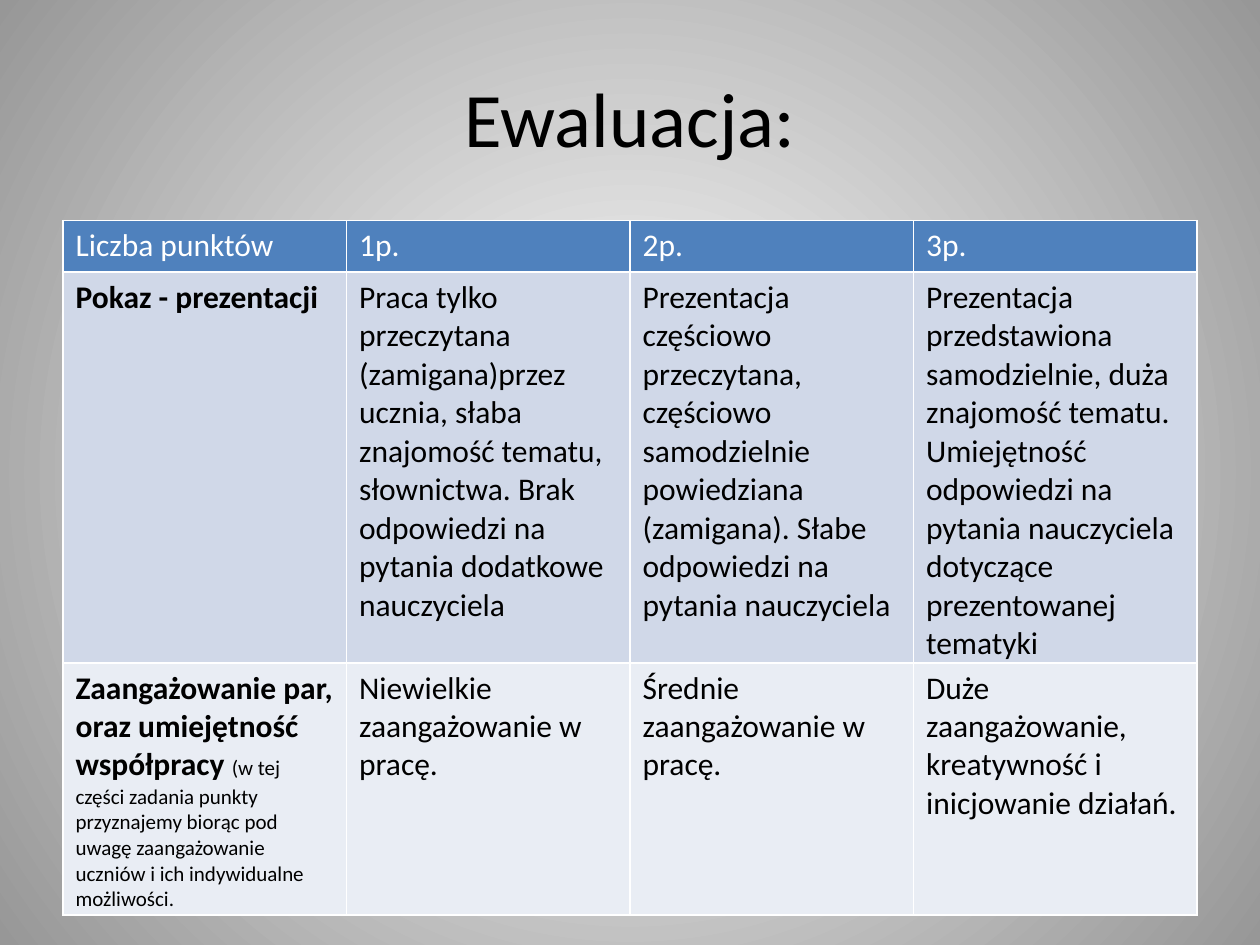
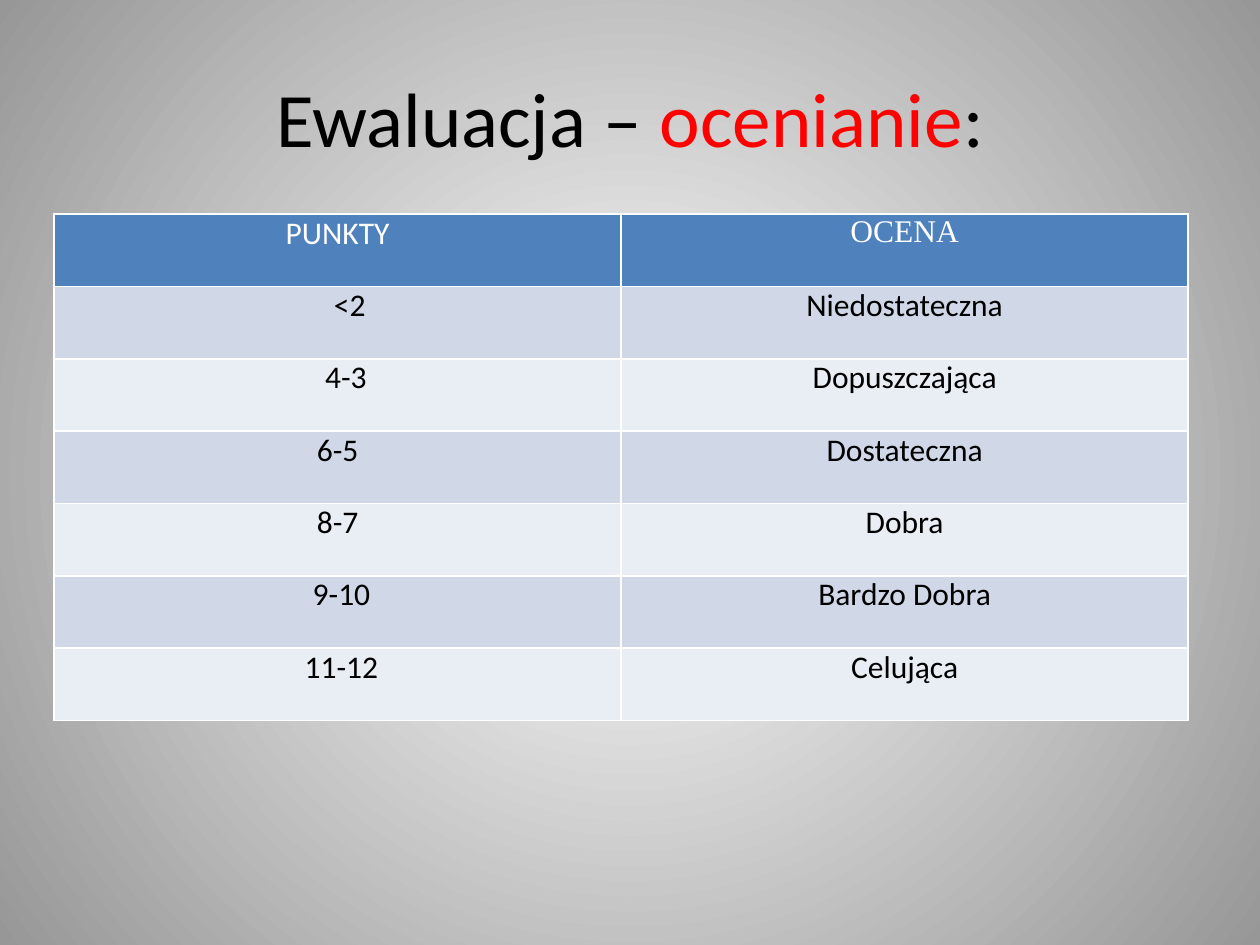
import pptx
import pptx.dml.color
import pptx.enum.text
import pptx.oxml
import pptx.util

Inches = pptx.util.Inches
Pt = pptx.util.Pt
CENTER = pptx.enum.text.PP_ALIGN.CENTER
LEFT = pptx.enum.text.PP_ALIGN.LEFT

# A text is a list of runs: (words, format changes).
CRITERIA_TITLE = [("Ewaluacja:", {})]
CRITERIA = [
    ["Liczba punktów", "1p.", "2p.", "3p."],
    [
        [("Pokaz - prezentacji", {"bold": True})],
        "Praca tylko przeczytana (zamigana)przez ucznia, słaba znajomość tematu, "
        "słownictwa. Brak odpowiedzi na pytania dodatkowe nauczyciela",
        "Prezentacja częściowo przeczytana, częściowo samodzielnie powiedziana "
        "(zamigana). Słabe odpowiedzi na pytania nauczyciela",
        "Prezentacja przedstawiona samodzielnie, duża znajomość tematu. Umiejętność "
        "odpowiedzi na pytania nauczyciela dotyczące prezentowanej tematyki",
    ],
    [
        [
            ("Zaangażowanie par, oraz umiejętność współpracy ", {"bold": True}),
            ("(w tej części zadania punkty przyznajemy biorąc pod uwagę "
             "zaangażowanie uczniów i ich indywidualne możliwości.", {"size": 12}),
        ],
        "Niewielkie zaangażowanie w pracę.",
        "Średnie zaangażowanie w pracę.",
        "Duże zaangażowanie, kreatywność i inicjowanie działań.",
    ],
]
CRITERIA_HEIGHTS = [0.41, 3.1, 2.0]

GRADES_TITLE = [("Ewaluacja – ", {}), ("ocenianie", {"color": "FF0000"}), (":", {})]
GRADES = [
    ["PUNKTY", [("OCENA", {"font": "Times New Roman"})]],
    ["<2", "Niedostateczna"],
    ["4-3", "Dopuszczająca"],
    ["6-5", "Dostateczna"],
    ["8-7", "Dobra"],
    ["9-10", "Bardzo Dobra"],
    ["11-12", "Celująca"],
]
GRADES_HEIGHTS = [4.02 / len(GRADES)] * len(GRADES)
GRADES_INDENTS = {1: 0.19, 2: 0.13, 5: 0.06, 6: 0.06}  # row: extra left margin of points

FONT = "Calibri"
BLACK, WHITE = "000000", "FFFFFF"
BACKGROUND_EDGE = "979797"
HEADER_FILL = "4F81BD"
BAND_FILLS = ["D0D8E8", "E9EDF4"]
CONTENT_WIDTH = 9
NS = 'xmlns:a="http://schemas.openxmlformats.org/drawingml/2006/main"'
NS_P = 'xmlns:p="http://schemas.openxmlformats.org/presentationml/2006/main"'


def rgb(color):
    return pptx.dml.color.RGBColor.from_string(color)


def set_background(master):
    """Give every slide a round gradient, white in the middle."""
    c_sld = master.element.cSld
    for old in c_sld.findall(pptx.oxml.ns.qn("p:bg")):
        c_sld.remove(old)
    c_sld.insert(0, pptx.oxml.parse_xml(
        f'<p:bg {NS} {NS_P}><p:bgPr><a:gradFill rotWithShape="1"><a:gsLst>'
        f'<a:gs pos="0"><a:srgbClr val="{WHITE}"/></a:gs>'
        f'<a:gs pos="100000"><a:srgbClr val="{BACKGROUND_EDGE}"/></a:gs></a:gsLst>'
        '<a:path path="circle"><a:fillToRect l="50000" t="50000" r="50000" b="50000"/>'
        '</a:path></a:gradFill><a:effectLst/></p:bgPr></p:bg>'))


def write(tf, runs, size, color, align):
    """Fill the first paragraph; a plain string counts as one run."""
    if isinstance(runs, str):
        runs = [(runs, {})]
    p = tf.paragraphs[0]
    p.alignment = align
    for words, changes in runs:
        r = p.add_run()
        r.text = words
        r.font.name = changes.get("font", FONT)
        r.font.size = Pt(changes.get("size", size))
        r.font.bold = changes.get("bold", False)
        r.font.color.rgb = rgb(changes.get("color", color))


def add_borders(cell):
    tc_pr = cell._tc.get_or_add_tcPr()
    for i, side in enumerate("LRTB"):
        tc_pr.insert(i, pptx.oxml.parse_xml(
            f'<a:ln{side} {NS} w="{Pt(1)}"><a:solidFill><a:srgbClr val="{WHITE}"/>'
            f'</a:solidFill></a:ln{side}>'))


def add_title(s, runs):
    sp = s.shapes.add_textbox(Inches(0.5), Inches(0.3), Inches(CONTENT_WIDTH), Inches(1.25))
    tf = sp.text_frame
    tf.word_wrap = True
    tf.vertical_anchor = pptx.enum.text.MSO_ANCHOR.MIDDLE
    write(tf, runs, 44, BLACK, CENTER)


def add_grid(s, rows, heights, left, top, margins, align, indents):
    """Add a table with equal columns, a blue header and banded rows."""
    columns = len(rows[0])
    table = s.shapes.add_table(len(rows), columns, Inches(left), Inches(top),
                               Inches(CONTENT_WIDTH), Inches(sum(heights))).table
    side, end = margins
    for i, (row, height) in enumerate(zip(rows, heights)):
        table.rows[i].height = Inches(height)
        fill = BAND_FILLS[(i - 1) % 2] if i else HEADER_FILL
        for j, text in enumerate(row):
            cell = table.cell(i, j)
            indent = indents.get(i, 0) if j == 0 else 0
            cell.margin_left, cell.margin_right = Inches(side + indent), Inches(side)
            cell.margin_top = cell.margin_bottom = Inches(end)
            cell.fill.solid()
            cell.fill.fore_color.rgb = rgb(fill)
            add_borders(cell)
            write(cell.text_frame, text, 18, BLACK if i else WHITE, align)


def main():
    prs = pptx.Presentation()
    prs.slide_width, prs.slide_height = Inches(10), Inches(7.5)
    set_background(prs.slide_master)
    blank = prs.slide_layouts[6]

    s = prs.slides.add_slide(blank)
    add_title(s, CRITERIA_TITLE)
    add_grid(s, CRITERIA, CRITERIA_HEIGHTS, 0.5, 1.75, (0.1, 0.05), LEFT, {})

    s = prs.slides.add_slide(blank)
    add_title(s, GRADES_TITLE)
    add_grid(s, GRADES, GRADES_HEIGHTS, 0.43, 1.7, (0.07, 0), CENTER, GRADES_INDENTS)

    prs.save("out.pptx")


if __name__ == "__main__":
    main()
